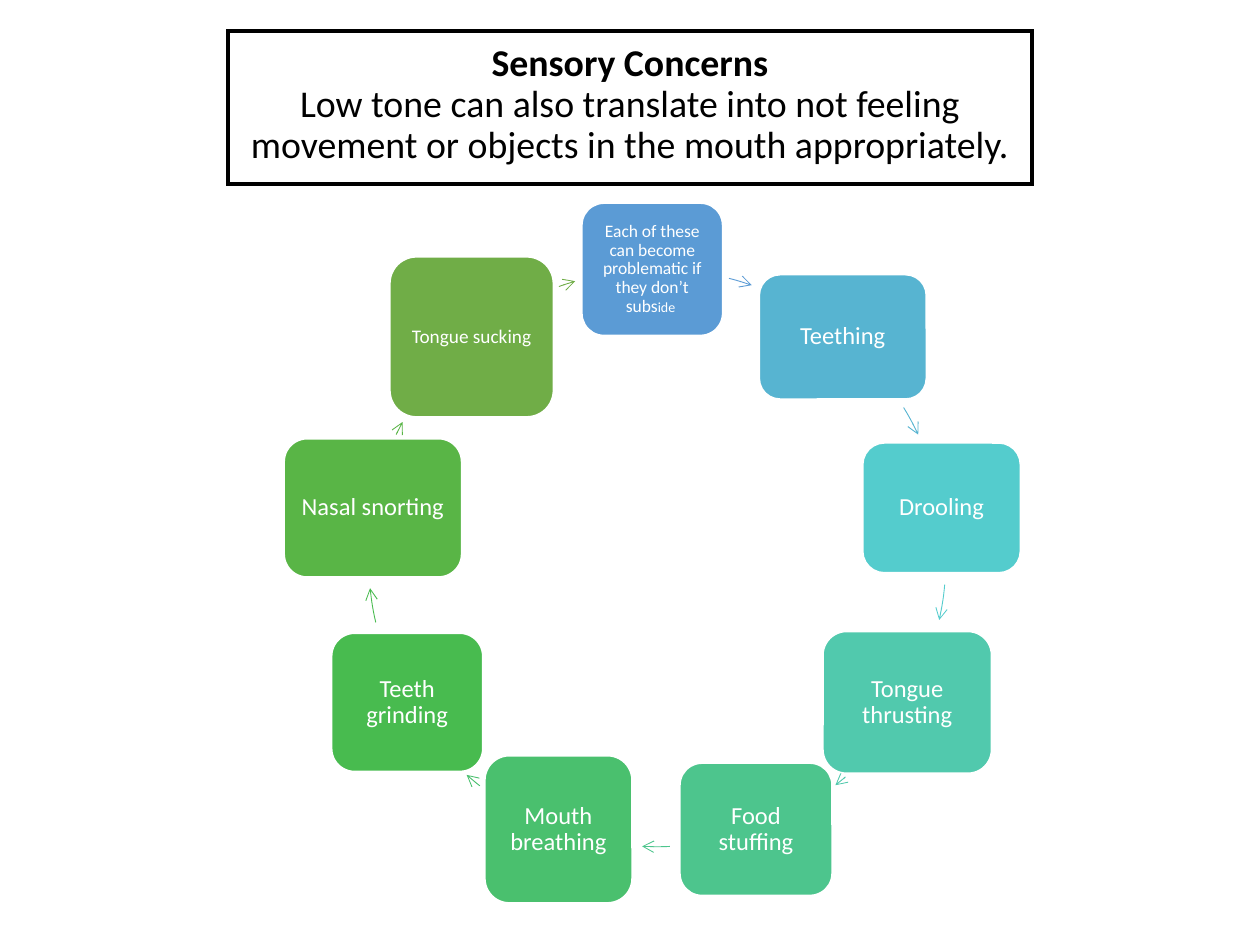
from collections import namedtuple
from math import cos, radians, sin

from lxml import etree
from pptx import Presentation
from pptx.dml.color import RGBColor
from pptx.enum.shapes import MSO_SHAPE
from pptx.enum.text import MSO_ANCHOR, MSO_AUTO_SIZE, PP_ALIGN
from pptx.oxml.ns import qn
from pptx.util import Cm, Pt

ROUNDED = MSO_SHAPE.ROUNDED_RECTANGLE
ARC = MSO_SHAPE.ARC
MIDDLE = MSO_ANCHOR.MIDDLE
NO_AUTOFIT = MSO_AUTO_SIZE.NONE
CENTER = PP_ALIGN.CENTER

FONT = "Calibri"
COLORS = {
    "white": "FFFFFF", "black": "000000",
    "blue": "5B9BD5", "sky": "57B4D1", "turquoise": "54CCCD",
    "aqua": "51C9AD", "mint": "4DC58D", "jade": "4AC06E",
    "green": "48BB4F", "leaf": "59B546", "olive": "70AD47",
}

# The cycle, in cm
CENTER_X, CENTER_Y, RADIUS = 13.25, 11.25, 5.82
# An adjustment of 1 stands for 100000 units, a degree for 60000
ADJUSTMENT_PER_DEGREE = 0.6

# Width and height in cm; the arrow runs between two clockwise angles from the top
Concern = namedtuple("Concern", "text size color width height arrow_from arrow_to")
CONCERNS = [
    Concern("Each of these can become problematic if they don’t subs", 10,
            "blue", 2.84, 2.67, 14.4, 19.1),
    Concern("Teething", 14, "sky", 3.37, 2.51, 58.6, 64.7),
    Concern("Drooling", 14, "turquoise", 3.18, 2.62, 95.3, 102.4),
    Concern("Tongue thrusting", 14, "aqua", 3.4, 2.86, 139.3, 141.9),
    Concern("Food stuffing", 14, "mint", 3.07, 2.67, 177.5, 183),
    Concern("Mouth breathing", 14, "jade", 2.97, 2.97, 217.9, 221.3),
    Concern("Teeth grinding", 14, "green", 3.05, 2.79, 257.1, 264),
    Concern("Nasal snorting", 14, "leaf", 3.58, 2.79, 295.3, 298.1),
    Concern("Tongue sucking", 11, "olive", 3.3, 3.23, 340.1, 343.5),
]


def rgb(name):
    return RGBColor.from_string(COLORS[name])


def outline(shape, color, width):
    shape.line.color.rgb = rgb(color)
    shape.line.width = Pt(width)


def add_line_detail(shape, tag, **attributes):
    etree.SubElement(shape.line._get_or_add_ln(), qn(tag), **attributes)


def format_paragraph(paragraph, size, color, bold=False):
    paragraph.alignment = CENTER
    paragraph.line_spacing = 0.9
    for run in paragraph.runs:
        run.font.name = FONT
        run.font.size = Pt(size)
        run.font.bold = bold
        run.font.color.rgb = rgb(color)


def set_title(slide):
    title = slide.shapes.title
    title.left, title.top = Cm(4.6), Cm(0.62)
    title.width, title.height = Cm(16.2), Cm(3.09)
    title.fill.solid()
    title.fill.fore_color.rgb = rgb("white")
    outline(title, "black", 2)
    add_line_detail(title, "a:miter", lim="800000")
    frame = title.text_frame
    frame.text = ("Sensory Concerns\nLow tone can also translate into not feeling "
                  "movement or objects in the mouth appropriately.")
    frame.word_wrap = True
    frame.auto_size = NO_AUTOFIT
    frame.vertical_anchor = MIDDLE
    frame.margin_bottom = Cm(0.22)
    heading, explanation = frame.paragraphs
    format_paragraph(heading, 21.6, "black", bold=True)
    format_paragraph(explanation, 21.6, "black")


def add_concern(slide, concern, angle, shift=0):
    turn = radians(angle)
    x = CENTER_X + RADIUS * sin(turn) + shift
    y = CENTER_Y - RADIUS * cos(turn)
    box = slide.shapes.add_shape(
        ROUNDED, Cm(x - concern.width / 2), Cm(y - concern.height / 2),
        Cm(concern.width), Cm(concern.height))
    box.shadow.inherit = False
    box.fill.solid()
    box.fill.fore_color.rgb = rgb(concern.color)
    outline(box, "white", 1)
    frame = box.text_frame
    frame.text = concern.text
    frame.word_wrap = True
    frame.vertical_anchor = MIDDLE
    inset = Cm(concern.size / 100)
    frame.margin_left = frame.margin_right = inset
    frame.margin_top = frame.margin_bottom = inset
    format_paragraph(frame.paragraphs[0], concern.size, "white")
    return box


def add_small_ending(box, text):
    ending = box.text_frame.paragraphs[0].add_run()
    ending.text = text
    ending.font.name = FONT
    ending.font.size = Pt(8)
    ending.font.color.rgb = rgb("white")


def add_arc_arrow(slide, concern):
    """Draw an arrow along part of the circle that joins all concerns."""
    arrow = slide.shapes.add_shape(
        ARC, Cm(CENTER_X - RADIUS), Cm(CENTER_Y - RADIUS),
        Cm(2 * RADIUS), Cm(2 * RADIUS))
    for index, angle in enumerate((concern.arrow_from, concern.arrow_to)):
        # Arc angles are counted from the right-hand side
        arrow.adjustments[index] = (angle - 90) % 360 * ADJUSTMENT_PER_DEGREE
    arrow.shadow.inherit = False
    arrow.fill.background()
    outline(arrow, concern.color, 0.5)
    add_line_detail(arrow, "a:tailEnd", type="arrow")


def main():
    presentation = Presentation()
    presentation.slide_width, presentation.slide_height = Cm(25.4), Cm(19.05)
    slide = presentation.slides.add_slide(presentation.slide_layouts[5])
    set_title(slide)
    angle_step = 360 / len(CONCERNS)
    for index, concern in enumerate(CONCERNS):
        is_summary = index == 0
        box = add_concern(slide, concern, index * angle_step,
                          shift=-0.1 if is_summary else 0)
        if is_summary:
            add_small_ending(box, "ide ")
        add_arc_arrow(slide, concern)
    presentation.save("out.pptx")


if __name__ == "__main__":
    main()
